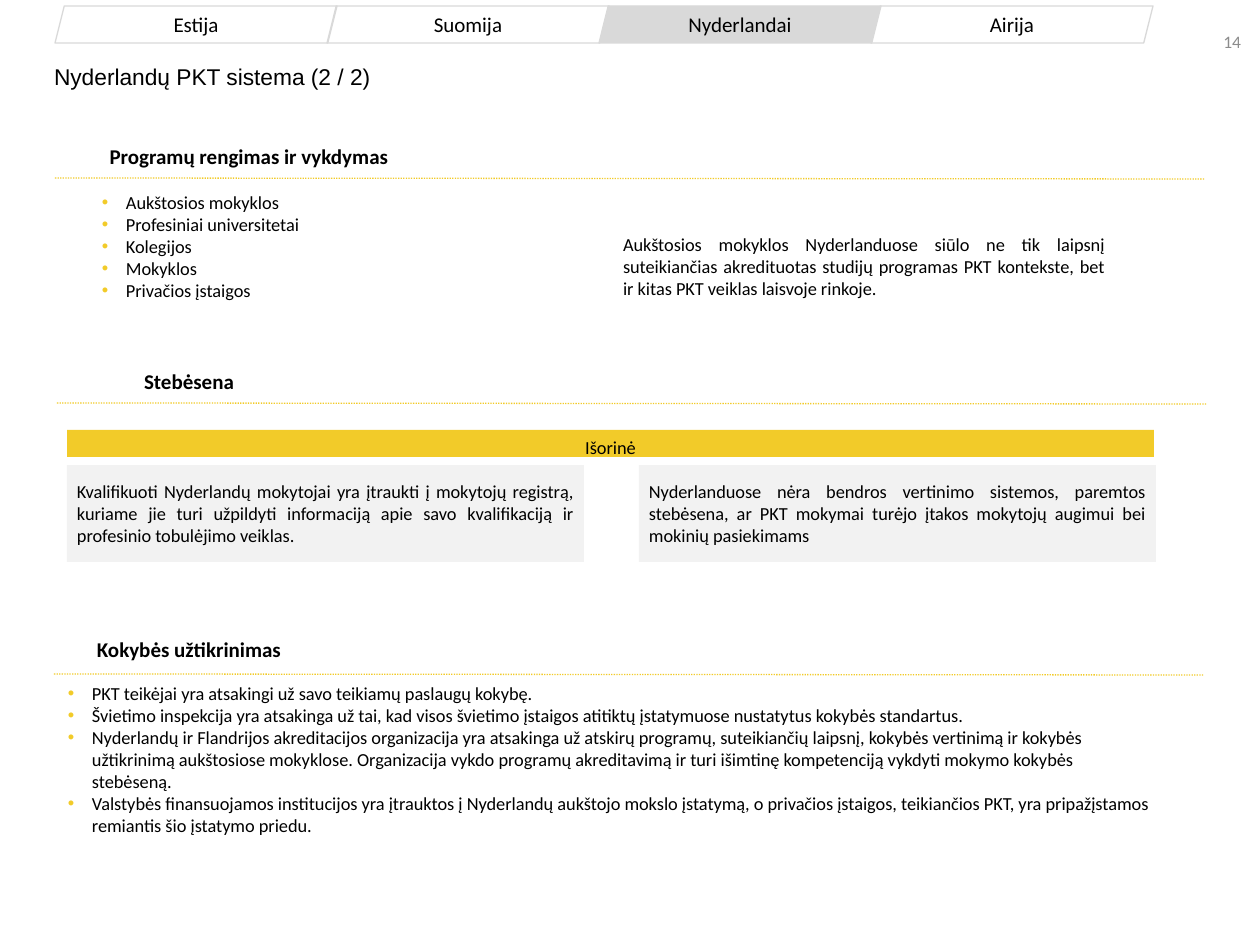
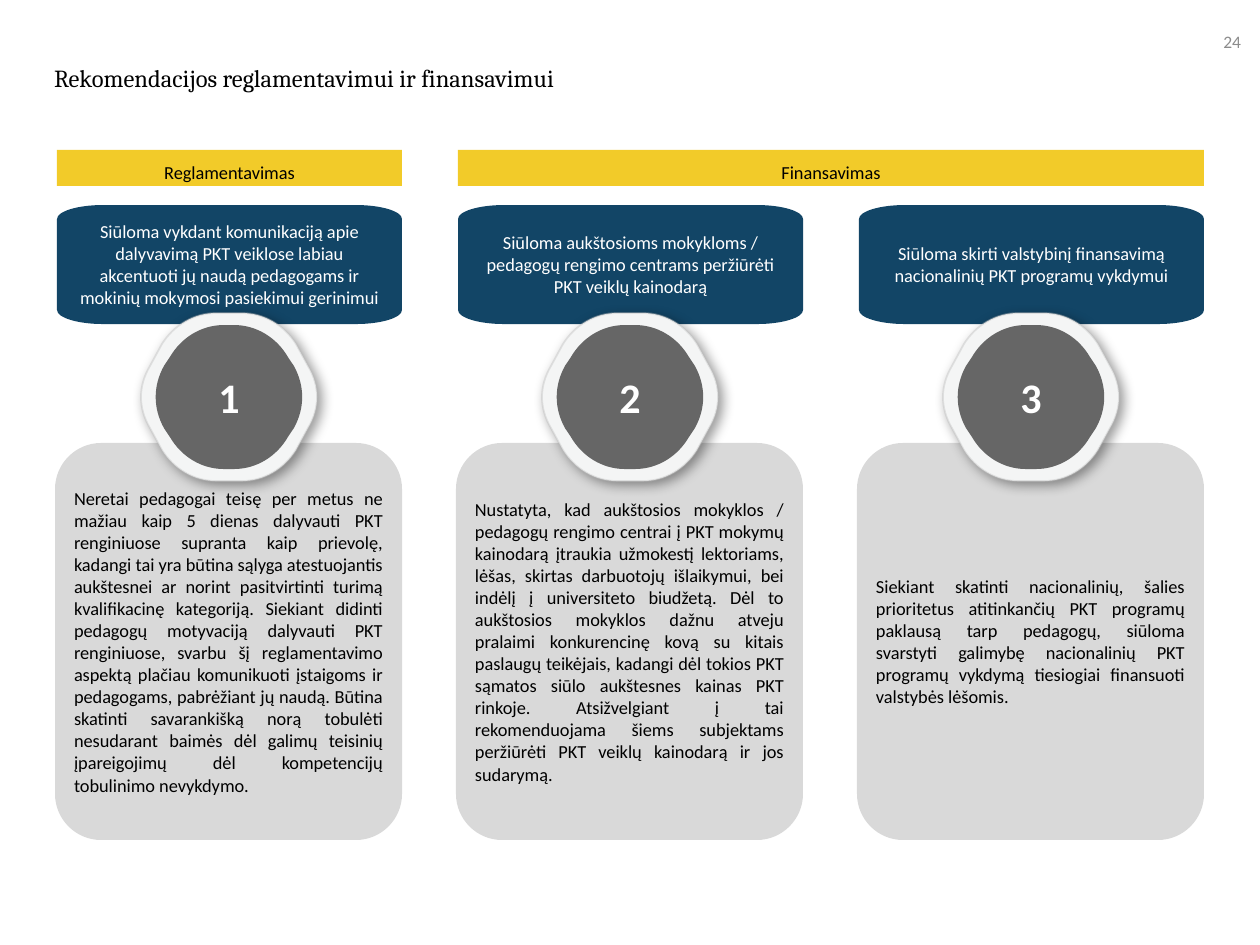
from dataclasses import dataclass

from lxml.etree import Element as Node, SubElement as Sub
from pptx import Presentation
from pptx.dml.color import RGBColor as RGB
from pptx.enum.dml import MSO_LINE_DASH_STYLE as Dash
from pptx.enum.shapes import MSO_CONNECTOR as Link, MSO_SHAPE as Kind
from pptx.enum.text import MSO_ANCHOR as Anchor, PP_ALIGN as Align
from pptx.oxml.ns import qn
from pptx.util import Pt

SCALE = 914400 / 126


@dataclass(frozen=True)
class Theme:
    black: str = "000000"
    white: str = "FFFFFF"
    gold: str = "F2CB29"
    navy: str = "124566"
    dark: str = "666666"
    pale: str = "F4F5F5"
    light: str = "F2F2F2"
    grey: str = "D9D9D9"
    edge: str = "BFBFBF"
    faint: str = "8C8C8C"
    font: str = "Calibri"
    body: float = 10.5
    head: float = 12
    page: float = 10
    badge: float = 24
    thin: float = 0.75


T = Theme()

TABS = ["Estija", "Suomija", "Nyderlandai", "Airija"]
MAKERS = ["Aukštosios mokyklos", "Profesiniai universitetai", "Kolegijos",
          "Mokyklos", "Privačios įstaigos"]
OFFER = ("Aukštosios mokyklos Nyderlanduose siūlo ne tik laipsnį suteikiančias "
         "akredituotas studijų programas PKT kontekste, bet ir kitas PKT veiklas "
         "laisvoje rinkoje.")
CHECKS = [
    "Kvalifikuoti Nyderlandų mokytojai yra įtraukti į mokytojų registrą, kuriame "
    "jie turi užpildyti informaciją apie savo kvalifikaciją ir profesinio "
    "tobulėjimo veiklas.",
    "Nyderlanduose nėra bendros vertinimo sistemos, paremtos stebėsena, ar PKT "
    "mokymai turėjo įtakos mokytojų augimui bei mokinių pasiekimams",
]
QUALITY = [
    "PKT teikėjai yra atsakingi už savo teikiamų paslaugų kokybę.",
    "Švietimo inspekcija yra atsakinga už tai, kad visos švietimo įstaigos "
    "atitiktų įstatymuose nustatytus kokybės standartus.",
    "Nyderlandų ir Flandrijos akreditacijos organizacija yra atsakinga už atskirų "
    "programų, suteikiančių laipsnį, kokybės vertinimą ir kokybės užtikrinimą "
    "aukštosiose mokyklose. Organizacija vykdo programų akreditavimą ir turi "
    "išimtinę kompetenciją vykdyti mokymo kokybės stebėseną.",
    "Valstybės finansuojamos institucijos yra įtrauktos į Nyderlandų aukštojo "
    "mokslo įstatymą, o privačios įstaigos, teikiančios PKT, yra pripažįstamos "
    "remiantis šio įstatymo priedu.",
]
ADVICE = [
    ("Siūloma vykdant komunikaciją apie dalyvavimą PKT veiklose labiau akcentuoti "
     "jų naudą pedagogams ir mokinių mokymosi pasiekimui gerinimui",
     "Neretai pedagogai teisę per metus ne mažiau kaip 5 dienas dalyvauti PKT "
     "renginiuose supranta kaip prievolę, kadangi tai yra būtina sąlyga "
     "atestuojantis aukštesnei ar norint pasitvirtinti turimą kvalifikacinę "
     "kategoriją. Siekiant didinti pedagogų motyvaciją dalyvauti PKT renginiuose, "
     "svarbu šį reglamentavimo aspektą plačiau komunikuoti įstaigoms ir "
     "pedagogams, pabrėžiant jų naudą. Būtina skatinti savarankišką norą tobulėti "
     "nesudarant baimės dėl galimų teisinių įpareigojimų dėl kompetencijų "
     "tobulinimo nevykdymo."),
    ("Siūloma aukštosioms mokykloms / pedagogų rengimo centrams peržiūrėti PKT "
     "veiklų kainodarą",
     "Nustatyta, kad aukštosios mokyklos / pedagogų rengimo centrai į PKT mokymų "
     "kainodarą įtraukia užmokestį lektoriams, lėšas, skirtas darbuotojų "
     "išlaikymui, bei indėlį į universiteto biudžetą. Dėl to aukštosios mokyklos "
     "dažnu atveju pralaimi konkurencinę kovą su kitais paslaugų teikėjais, "
     "kadangi dėl tokios PKT sąmatos siūlo aukštesnes kainas PKT rinkoje. "
     "Atsižvelgiant į tai rekomenduojama šiems subjektams peržiūrėti PKT veiklų "
     "kainodarą ir jos sudarymą."),
    ("Siūloma skirti valstybinį finansavimą nacionalinių PKT programų vykdymui",
     "Siekiant skatinti nacionalinių, šalies prioritetus atitinkančių PKT programų "
     "paklausą tarp pedagogų, siūloma svarstyti galimybę nacionalinių PKT programų "
     "vykdymą tiesiogiai finansuoti valstybės lėšomis."),
]

# Right-hand corner curve and side curve of a badge, from its centre
RIM = ([(13, -84), (35, -84), (55, -72), (67, -53)],
       [(79, -31), (91, -11), (91, 11), (79, 31)])
CORE = ([(5, -72), (28, -72), (48, -59), (59, -40)],
        [(65, -31), (76, -11), (76, 11), (65, 31)])


def px(*vals):
    return [round(v * SCALE) for v in vals]


# Text
def dot(para):
    props = para._p.get_or_add_pPr()
    wide = px(24)[0]
    props.set("marL", str(wide))
    props.set("indent", str(-wide))
    Sub(Sub(props, qn("a:buClr")), qn("a:srgbClr")).set("val", T.gold)
    Sub(props, qn("a:buFont")).set("typeface", "Arial")
    Sub(props, qn("a:buChar")).set("char", "•")


def write(shape, lines, size=T.body, ink=T.black, align=Align.CENTER, bold=False,
          font=T.font, pad=(13, 6, 13, 6), anchor=Anchor.MIDDLE, lead=None,
          dots=False):
    frame = shape.text_frame
    frame.word_wrap = True
    frame.vertical_anchor = anchor
    (frame.margin_left, frame.margin_top,
     frame.margin_right, frame.margin_bottom) = px(*pad)
    for i, line in enumerate(lines):
        para = frame.add_paragraph() if i else frame.paragraphs[0]
        para.alignment = align
        if lead:
            para.line_spacing = Pt(lead)
        if dots:
            dot(para)
        run = para.add_run()
        run.text = line
        run.font.name, run.font.size, run.font.bold = font, Pt(size), bold
        run.font.color.rgb = RGB.from_string(ink)


def label(slide, area, lines, **look):
    write(slide.shapes.add_textbox(*px(*area)), lines, **look)


# Shapes
def paint(shape, fill=None, edge=None, width=T.thin):
    shape.shadow.inherit = False
    if fill:
        shape.fill.solid()
        shape.fill.fore_color.rgb = RGB.from_string(fill)
    else:
        shape.fill.background()
    if edge:
        shape.line.color.rgb = RGB.from_string(edge)
        shape.line.width = Pt(width)
    else:
        shape.line.fill.background()
    return shape


def box(slide, area, text, fill, edge=None, kind=Kind.RECTANGLE, **look):
    shape = paint(slide.shapes.add_shape(kind, *px(*area)), fill, edge)
    write(shape, [text], **look)


def bar(slide, area, text):
    box(slide, area, text, T.gold, pad=(10,) * 4, lead=17)


def mirror(corner, side=()):
    half = corner + list(side) + [(x, -y) for x, y in reversed(corner)]
    return half + [(-x, y) for x, y in reversed(half)]


def bend(shape):
    """Turn every four outline points into one Bezier curve."""
    track = shape._element.find(".//" + qn("a:path"))
    nodes = list(track)[:-1]
    for i in range(0, len(nodes), 4):
        arc = Node(qn("a:cubicBezTo"))
        nodes[i].addnext(arc)
        for node in nodes[i + 1:i + 4]:
            arc.append(node[0])
            track.remove(node)


def blob(slide, mid, spots, fill, edge=None, width=T.thin):
    ends = [px(mid[0] + x, mid[1] + y) for x, y in spots]
    pen = slide.shapes.build_freeform(*ends[0], scale=1.0)
    pen.add_line_segments(ends[1:], close=True)
    shape = pen.convert_to_shape()
    bend(shape)
    return paint(shape, fill, edge, width)


def panel(slide, area, rx, ry, text, fill, **look):
    x, y, w, h = area
    r, b = w / 2, -h / 2
    corner = [(r - rx, b), (r - rx * 0.45, b), (r, b + ry * 0.45), (r, b + ry)]
    shape = blob(slide, (x + r, y - b), mirror(corner), fill)
    write(shape, [text], pad=(19,) * 4, **look)


def fade(color, share):
    Sub(color, qn("a:alpha")).set("val", str(share * 1000))


def badge(slide, mid, text):
    ring = blob(slide, mid, mirror(*RIM), T.pale, T.edge, 1)
    props = ring._element.spPr
    fade(props.find(qn("a:ln")).find(".//" + qn("a:srgbClr")), 40)
    cast = Sub(props.find(qn("a:effectLst")), qn("a:outerShdw"))
    for key, val in (("blurRad", Pt(7)), ("dist", Pt(3)), ("dir", 40 * 60000),
                     ("algn", "tl"), ("rotWithShape", 0)):
        cast.set(key, str(val))
    tint = Sub(cast, qn("a:srgbClr"))
    tint.set("val", T.black)
    fade(tint, 40)
    write(blob(slide, mid, mirror(*CORE), T.dark), [text], T.badge, T.white,
          bold=True, pad=(4,) * 4)


def rule(slide, x, y):
    line = slide.shapes.add_connector(Link.STRAIGHT, *px(x, y, x + 1150, y + 1))
    line.line.color.rgb = RGB.from_string(T.gold)
    line.line.width = Pt(T.thin)
    line.line.dash_style = Dash.ROUND_DOT
    Sub(line._element.spPr, qn("a:effectLst"))


def section(slide, text, x, y, w, line):
    box(slide, (55, y, w, 54), text, T.white, size=T.head, bold=True)
    rule(slide, x, line)


# Slides
def start(deck, title, page, font, size, align=Align.LEFT):
    slide = deck.slides.add_slide(deck.slide_layouts[6])
    label(slide, (1201, 16, 53, 51), [page], size=T.page, ink=T.faint,
          align=Align.RIGHT)
    label(slide, (54, 57, 1152, 68), [title], size=size, font=font, align=align,
          pad=(0, 6, 13, 6), anchor=Anchor.TOP)
    return slide


def system(deck):
    slide = start(deck, "Nyderlandų PKT sistema (2 / 2)", "14", "Arial", 13,
                  Align.JUSTIFY)
    # Country tabs
    for i, name in enumerate(TABS):
        fill = T.grey if name == "Nyderlandai" else None
        box(slide, (55 + 272 * i, 6, 282, 37), name, fill, T.grey,
            Kind.PARALLELOGRAM, size=T.head)
    # Section heads
    section(slide, "Stebėsena", 57, 354, 268, 403)
    section(slide, "Programų rengimas ir vykdymas", 55, 129, 388, 178)
    section(slide, "Kokybės užtikrinimas", 54, 622, 268, 674)
    # Providers and quality
    plain = dict(anchor=Anchor.TOP, align=Align.LEFT, dots=True)
    label(slide, (89, 185, 315, 123), MAKERS, **plain)
    label(slide, (55, 676, 1108, 169), QUALITY, **plain)
    label(slide, (610, 227, 508, 80), [OFFER], anchor=Anchor.TOP,
          align=Align.JUSTIFY)
    # Monitoring
    bar(slide, (67, 430, 1087, 27), "Išorinė")
    for i, text in enumerate(CHECKS):
        box(slide, (67 + 572 * i, 465, 517, 97), text, T.light,
            align=Align.JUSTIFY, pad=(10,) * 4)


def advice(deck):
    slide = start(deck, "Rekomendacijos reglamentavimui ir finansavimui", "24",
                  "Cambria", 14)
    step, wide = 401, 345
    # Columns
    for i, (claim, reason) in enumerate(ADVICE):
        x = 55 + step * i
        panel(slide, (x, 443, 347, 397), 46, 46, reason, T.grey,
              align=Align.JUSTIFY)
        panel(slide, (x + 2, 205, wide, 119), 46, 14, claim, T.navy, ink=T.white)
        badge(slide, (x + 174, 397), str(i + 1))
    # Column heads
    bar(slide, (57, 150, wide, 36), "Reglamentavimas")
    bar(slide, (57 + step, 150, step + wide, 36), "Finansavimas")


def main():
    deck = Presentation()
    deck.slide_width, deck.slide_height = px(1260, 945)
    system(deck)
    advice(deck)
    deck.save("out.pptx")


if __name__ == "__main__":
    main()
